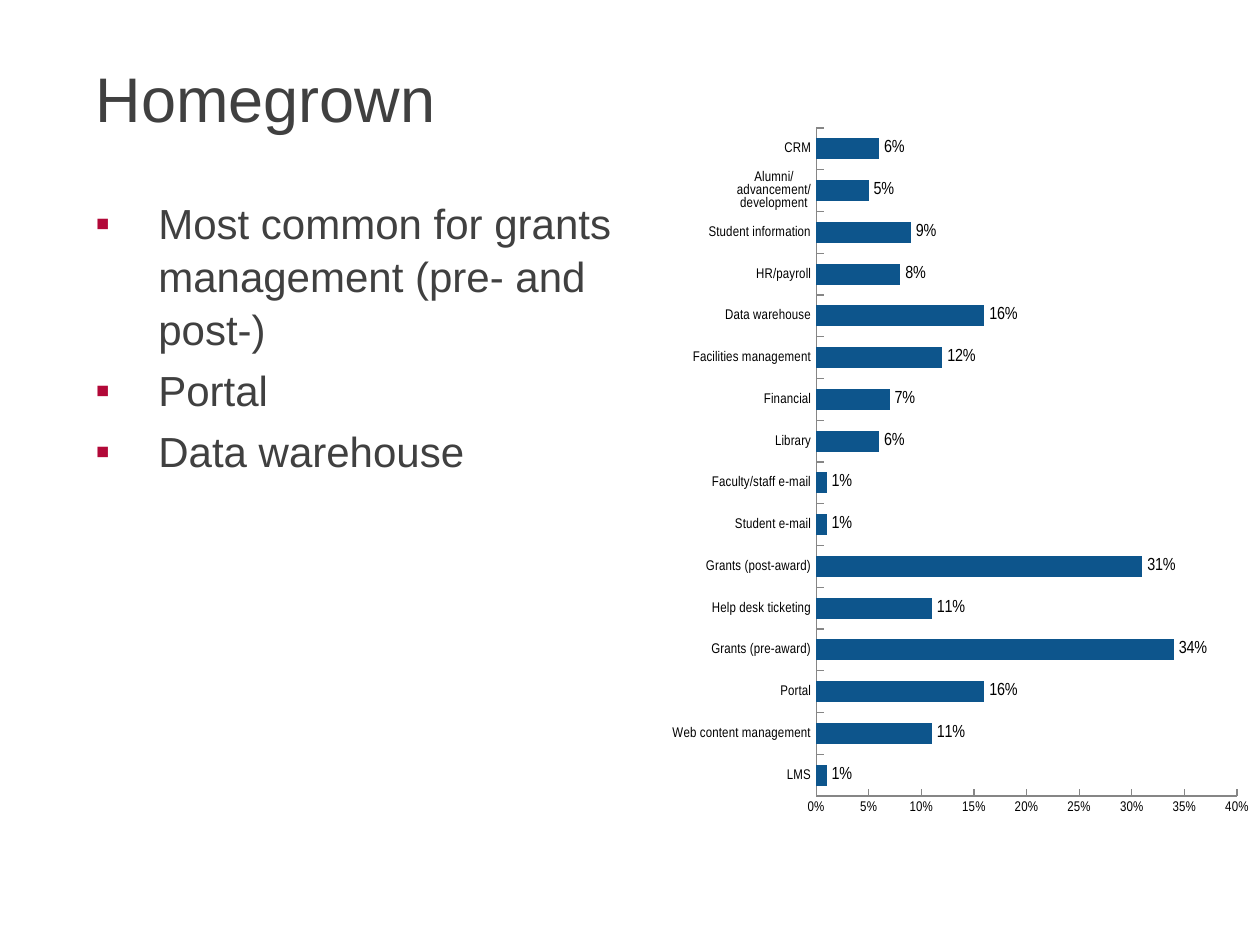
"""Build the Homegrown slide: a bulleted summary beside a bar chart."""
import lxml.etree
import pptx
import pptx.chart.data
import pptx.dml.color
import pptx.enum.chart
import pptx.enum.text
import pptx.oxml
import pptx.oxml.ns
import pptx.util

PX = 914400 / 126
COLORS = {"text": "404040", "bullet": "B20838", "bar": "0D558C", "axis": "868686", "label": "000000"}


def box(left, top, width, height):
    return [pptx.util.Emu(round(value * PX)) for value in (left, top, width, height)]


def set_font(font, name, size, color):
    formats = {"name": name, "size": pptx.util.Pt(size), "bold": False}
    for attribute, value in formats.items():
        setattr(font, attribute, value)
    font.color.rgb = pptx.dml.color.RGBColor.from_string(COLORS[color])


presentation = pptx.Presentation()
presentation.slide_width = pptx.util.Inches(10)
presentation.slide_height = pptx.util.Inches(7.5)
slide = presentation.slides.add_slide(presentation.slide_layouts[5])

title = slide.shapes.title
title.left, title.top, title.width, title.height = box(83, 47, 1105, 101)
title.text_frame.text = "Homegrown"
title.text_frame.vertical_anchor = pptx.enum.text.MSO_ANCHOR.MIDDLE
title_paragraph = title.text_frame.paragraphs[0]
title_paragraph.alignment = pptx.enum.text.PP_ALIGN.LEFT
set_font(title_paragraph.font, "Arial", 36, "text")

summary = slide.shapes.add_textbox(*box(83, 189, 567, 626)).text_frame
summary.word_wrap = True
points = ["Most common for grants management (pre- and post-)", "Portal", "Data warehouse"]
summary.text = "\n".join(points)
for index, paragraph in enumerate(summary.paragraphs):
    paragraph.line_spacing = 1.05
    paragraph.space_before = pptx.util.Pt(4.8 if index else 0)
    properties = paragraph._p.get_or_add_pPr()
    properties.set("marL", "457200")
    properties.set("indent", "-457200")
    bullet_color = lxml.etree.SubElement(properties, pptx.oxml.ns.qn("a:buClr"))
    lxml.etree.SubElement(bullet_color, pptx.oxml.ns.qn("a:srgbClr"), val=COLORS["bullet"])
    lxml.etree.SubElement(properties, pptx.oxml.ns.qn("a:buFont"), typeface="Arial")
    lxml.etree.SubElement(properties, pptx.oxml.ns.qn("a:buChar"), char="▪")
    set_font(paragraph.font, "Arial", 24, "text")

shares = {
    "LMS": 0.01,
    "Web content management": 0.11,
    "Portal": 0.16,
    "Grants (pre-award)": 0.34,
    "Help desk ticketing": 0.11,
    "Grants (post-award)": 0.31,
    "Student e-mail": 0.01,
    "Faculty/staff e-mail": 0.01,
    "Library": 0.06,
    "Financial": 0.07,
    "Facilities management": 0.12,
    "Data warehouse": 0.16,
    "HR/payroll": 0.08,
    "Student information": 0.09,
    "Alumni/advancement/development": 0.05,
    "CRM": 0.06,
}
chart_data = pptx.chart.data.CategoryChartData(number_format="0%")
chart_data.categories = list(shares)
chart_data.add_series("Series 1", list(shares.values()))
chart = slide.shapes.add_chart(
    pptx.enum.chart.XL_CHART_TYPE.BAR_CLUSTERED, *box(672, 105, 577, 768), chart_data
).chart
chart.has_legend = False
chart.has_title = False
set_font(chart.font, "Arial Narrow", 8, "label")

plot = chart.plots[0]
plot.gap_width = 100
plot.vary_by_categories = False
series = plot.series[0]
series.format.fill.solid()
series.format.fill.fore_color.rgb = pptx.dml.color.RGBColor.from_string(COLORS["bar"])
label_formats = {
    "show_value": True,
    "number_format": "0%",
    "number_format_is_linked": False,
    "position": pptx.enum.chart.XL_LABEL_POSITION.OUTSIDE_END,
}
for attribute, value in label_formats.items():
    setattr(series.data_labels, attribute, value)
set_font(series.data_labels.font, "Arial Narrow", 10, "label")

axis_formats = {
    "has_major_gridlines": False,
    "major_tick_mark": pptx.enum.chart.XL_TICK_MARK.INSIDE,
    "minor_tick_mark": pptx.enum.chart.XL_TICK_MARK.NONE,
}
for axis in (chart.category_axis, chart.value_axis):
    for attribute, value in axis_formats.items():
        setattr(axis, attribute, value)
    axis.format.line.width = pptx.util.Pt(0.75)
    axis.format.line.color.rgb = pptx.dml.color.RGBColor.from_string(COLORS["axis"])
    set_font(axis.tick_labels.font, "Arial Narrow", 8, "label")
value_axis = chart.value_axis
value_axis.minimum_scale, value_axis.maximum_scale, value_axis.major_unit = 0, 0.4, 0.05
value_axis.tick_labels.number_format = "0%"
value_axis.tick_labels.number_format_is_linked = False

plot_area = chart._chartSpace.chart.plotArea
for old_layout in plot_area.findall(pptx.oxml.ns.qn("c:layout")):
    plot_area.remove(old_layout)
layout = pptx.oxml.parse_xml(f"<c:layout {pptx.oxml.ns.nsdecls('c')}><c:manualLayout/></c:layout>")
plot_layout = {
    "layoutTarget": "inner", "xMode": "edge", "yMode": "edge",
    "x": "0.25", "y": "0.03", "w": "0.73", "h": "0.87",
}
for tag, value in plot_layout.items():
    lxml.etree.SubElement(layout[0], pptx.oxml.ns.qn(f"c:{tag}"), val=value)
plot_area.insert(0, layout)

presentation.save("out.pptx")
